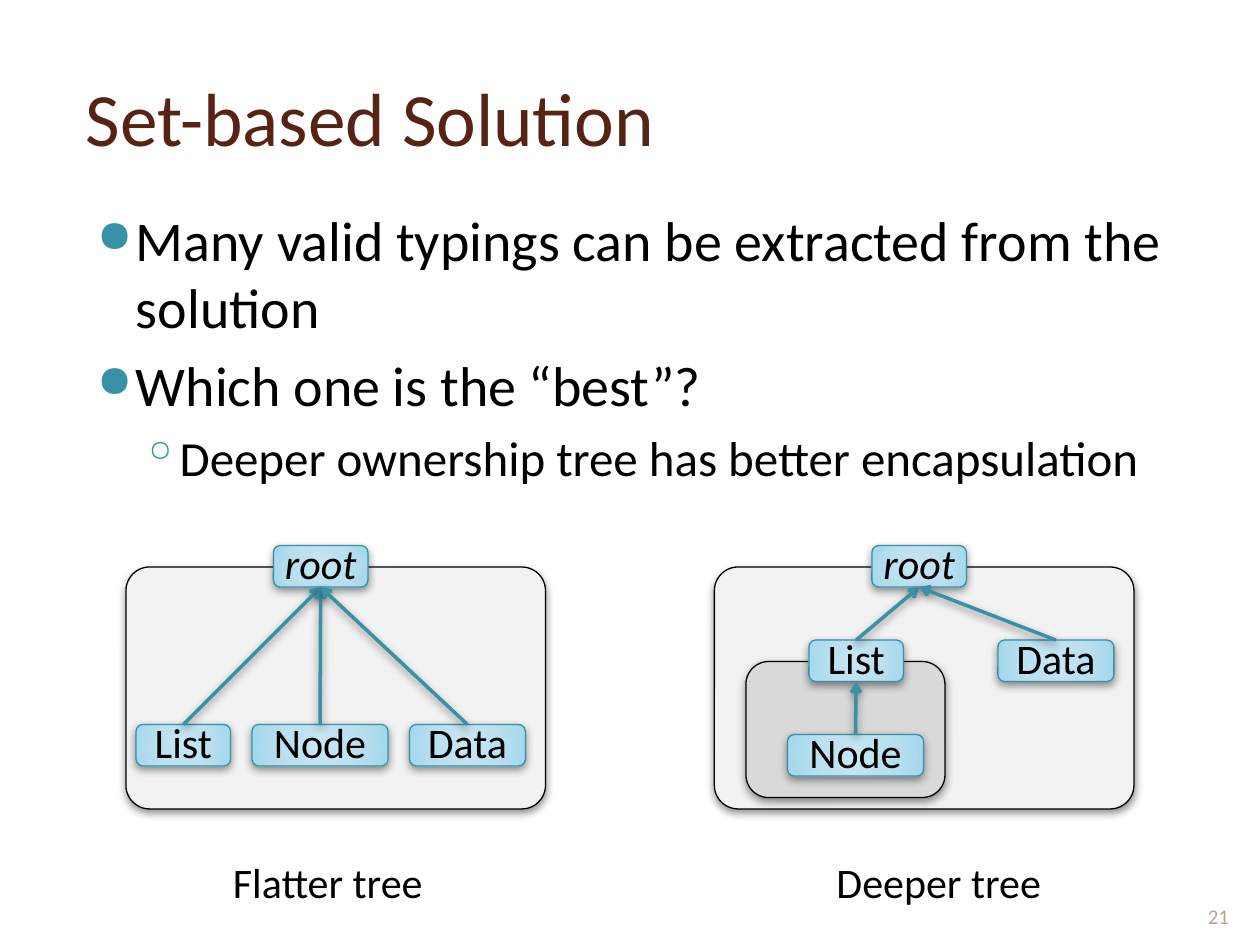
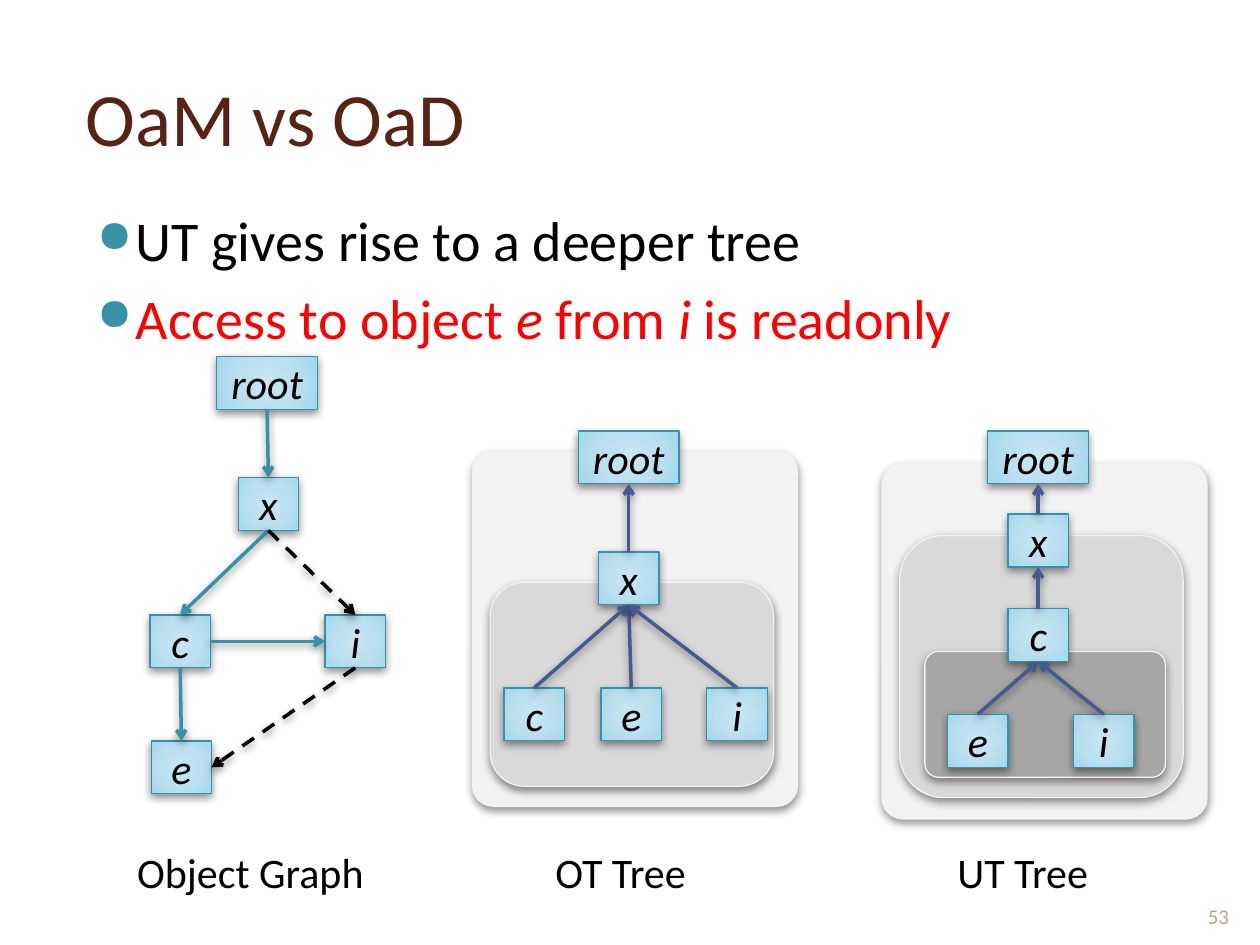
from lxml import etree
from pptx import Presentation
from pptx import util as u
from pptx.dml.color import RGBColor
from pptx.enum import dml, shapes, text
from pptx.oxml import parse_xml
from pptx.oxml.ns import nsdecls, qn

FONT = "Calibri"
BROWN = RGBColor(0x57, 0x23, 0x14)
BLACK = RGBColor(0, 0, 0)
RED = RGBColor(0xFF, 0, 0)
TEAL = RGBColor(0x38, 0x91, 0xA7)
INDIGO = RGBColor(0x47, 0x5A, 0x8D)
SAND = RGBColor(0xB6, 0xA9, 0x8A)
PALE = RGBColor(0xF2, 0xF2, 0xF2)
LIGHT = RGBColor(0xD9, 0xD9, 0xD9)
MID = RGBColor(0xA6, 0xA6, 0xA6)
TOP, LEFT, BOTTOM, RIGHT = range(4)

STOPS = [(0, "C9E6F2"), (50, "BBE0EF"), (97, "A4D8ED"), (100, "9BD7EE")]
GLOW = (
    f'<a:gradFill {nsdecls("a")} rotWithShape="1"><a:gsLst>'
    + "".join(f'<a:gs pos="{pos * 1000}"><a:srgbClr val="{rgb}"/></a:gs>' for pos, rgb in STOPS)
    + '</a:gsLst><a:path path="circle"><a:fillToRect l="50000" t="50000" r="50000" b="50000"/>'
    "</a:path></a:gradFill>"
)
SHADOW = (
    f'<a:effectLst {nsdecls("a")}><a:outerShdw blurRad="63500" dist="25400" dir="5400000" '
    'rotWithShape="0"><a:srgbClr val="000000"><a:alpha val="43000"/></a:srgbClr>'
    "</a:outerShdw></a:effectLst>"
)


def add_run(paragraph, words, size, color=BLACK, italic=False):
    run = paragraph.add_run()
    run.text = words
    run.font.name, run.font.size = FONT, u.Pt(size)
    run.font.color.rgb, run.font.italic = color, italic


def add_frame(slide, left, top, width, height):
    frame = slide.shapes.add_textbox(*map(u.Inches, (left, top, width, height))).text_frame
    frame.word_wrap = True
    return frame


# Content: bullets are (level, colour, [(words, italic)]);
# panels are (left, top, width, height, corner, fill);
# nodes are key: (label, left, top, width);
# links are (start, side, end, side, colour, dashed)
SLIDES = [
    {
        "title": "Set-based Solution",
        "page": "21",
        "bullets": [
            (0, BLACK, [("Many valid typings can be extracted from the solution", False)]),
            (0, BLACK, [("Which one is the “best”?", False)]),
            (1, BLACK, [("Deeper ownership tree has better encapsulation", False)]),
        ],
        "captions": [("Flatter tree", 1.75, 6.75, 1.75), ("Deeper tree", 6.54, 6.75, 1.89)],
        "rounded": True,
        "panel line": BLACK,
        "panels": [
            (1, 4.5, 3.33, 1.92, 0.098, PALE),
            (5.67, 4.5, 3.33, 1.92, 0.098, PALE),
            (5.92, 5.25, 1.58, 1.08, 0.167, LIGHT),
        ],
        "nodes": {
            "flat root": ("root", 2.17, 4.33, 0.75),
            "flat list": ("List", 1.08, 5.75, 0.75),
            "flat node": ("Node", 2, 5.75, 1.08),
            "flat data": ("Data", 3.25, 5.75, 0.92),
            "deep root": ("root", 6.92, 4.33, 0.75),
            "deep list": ("List", 6.42, 5.08, 0.75),
            "deep node": ("Node", 6.25, 5.83, 1.08),
            "deep data": ("Data", 7.92, 5.08, 0.92),
        },
        "links": [
            (child, TOP, parent, BOTTOM, TEAL, False)
            for child, parent in [
                ("flat list", "flat root"), ("flat node", "flat root"), ("flat data", "flat root"),
                ("deep list", "deep root"), ("deep node", "deep list"), ("deep data", "deep root"),
            ]
        ],
    },
    {
        "title": "OaM vs OaD",
        "page": "53",
        "bullets": [
            (0, BLACK, [("UT gives rise to a deeper tree", False)]),
            (0, RED, [("Access to object ", False), ("e", True), (" from ", False),
                      ("i ", True), ("is readonly", False)]),
        ],
        "captions": [
            ("Object Graph", 0.99, 6.67, 2.1),
            ("OT Tree", 4.31, 6.67, 1.44),
            ("UT Tree", 7.5, 6.67, 1.5),
        ],
        "rounded": False,
        "panel line": PALE,
        "panels": [
            (3.75, 3.58, 2.58, 2.82, 0.065, PALE),
            (3.89, 4.62, 2.25, 1.62, 0.167, LIGHT),
            (7, 3.68, 2.58, 2.82, 0.065, PALE),
            (7.14, 4.25, 2.25, 2.08, 0.167, LIGHT),
            (7.34, 5.17, 1.91, 1, 0.11, MID),
        ],
        "nodes": {
            "graph root": ("root", 1.72, 2.83, 0.8),
            "graph x": ("x", 1.89, 3.79, 0.48),
            "graph i": ("i", 2.58, 4.88, 0.48),
            "graph c": ("c", 1.19, 4.88, 0.48),
            "graph e": ("e", 1.2, 5.88, 0.48),
            "OT root": ("root", 4.59, 3.42, 0.8),
            "OT x": ("x", 4.75, 4.38, 0.48),
            "OT c": ("c", 4, 5.46, 0.48),
            "OT e": ("e", 4.77, 5.46, 0.48),
            "OT i": ("i", 5.61, 5.46, 0.48),
            "UT root": ("root", 7.84, 3.42, 0.8),
            "UT x": ("x", 8, 4.08, 0.48),
            "UT c": ("c", 8, 4.83, 0.48),
            "UT e": ("e", 7.52, 5.67, 0.48),
            "UT i": ("i", 8.52, 5.67, 0.48),
        },
        "links": [
            ("graph root", BOTTOM, "graph x", TOP, TEAL, False),
            ("graph x", BOTTOM, "graph c", TOP, TEAL, False),
            ("graph x", BOTTOM, "graph i", TOP, BLACK, True),
            ("graph c", RIGHT, "graph i", LEFT, TEAL, False),
            ("graph c", BOTTOM, "graph e", TOP, TEAL, False),
            ("graph i", BOTTOM, "graph e", RIGHT, BLACK, True),
        ] + [
            (child, TOP, parent, BOTTOM, INDIGO, False)
            for child, parent in [
                ("OT x", "OT root"), ("OT c", "OT x"), ("OT e", "OT x"), ("OT i", "OT x"),
                ("UT x", "UT root"), ("UT c", "UT x"), ("UT e", "UT c"), ("UT i", "UT c"),
            ]
        ],
    },
]

# Bullet levels: left indent, hanging indent, space before, size, symbol, symbol size
LEVELS = [(0.4, -0.31, 6, 32, "●", 80), (0.7, -0.26, 5.5, 28, "◦", 100)]

deck = Presentation()
deck.slide_width, deck.slide_height = u.Inches(10), u.Inches(7.5)

for content in SLIDES:
    slide = deck.slides.add_slide(deck.slide_layouts[5])

    # Title
    title = slide.shapes.title
    title.left, title.top, title.width, title.height = map(u.Inches, (0.58, 0.3, 8.87, 1.25))
    title.text_frame.vertical_anchor = text.MSO_ANCHOR.MIDDLE
    title.text_frame.auto_size = text.MSO_AUTO_SIZE.NONE
    heading = title.text_frame.paragraphs[0]
    heading.alignment = text.PP_ALIGN.LEFT
    add_run(heading, content["title"], 43, BROWN)

    # Bullets
    body = add_frame(slide, 0.58, 1.58, 8.87, 5.25)
    for index, (level, color, runs) in enumerate(content["bullets"]):
        indent, hanging, before, size, symbol, percent = LEVELS[level]
        bullet = body.add_paragraph() if index else body.paragraphs[0]
        bullet.level, bullet.space_before = level, u.Pt(before)
        for words, italic in runs:
            add_run(bullet, words, size, color, italic)
        props = bullet._p.get_or_add_pPr()
        props.set("marL", str(u.Inches(indent)))
        props.set("indent", str(u.Inches(hanging)))
        tint = etree.SubElement(props, qn("a:buClr"))
        etree.SubElement(tint, qn("a:srgbClr"), val=str(TEAL))
        etree.SubElement(props, qn("a:buSzPct"), val=str(percent * 1000))
        etree.SubElement(props, qn("a:buChar"), char=symbol)

    # Ownership panels
    for left, top, width, height, corner, fill in content["panels"]:
        panel = slide.shapes.add_shape(
            shapes.MSO_SHAPE.ROUNDED_RECTANGLE, *map(u.Inches, (left, top, width, height)))
        panel.adjustments[0] = corner
        panel.fill.solid()
        panel.fill.fore_color.rgb = fill
        panel.line.color.rgb, panel.line.width = content["panel line"], u.Pt(0.75)
        panel._element.spPr.append(parse_xml(SHADOW))

    # Object nodes
    rounded = content["rounded"]
    outline = shapes.MSO_SHAPE.ROUNDED_RECTANGLE if rounded else shapes.MSO_SHAPE.RECTANGLE
    node_height = 0.33 if rounded else 0.42
    nodes = {}
    for key, (label, left, top, width) in content["nodes"].items():
        node = slide.shapes.add_shape(outline, *map(u.Inches, (left, top, width, node_height)))
        node.line.color.rgb, node.line.width = TEAL, u.Pt(0.75)
        node._element.spPr.insert(2, parse_xml(GLOW))
        node._element.spPr.append(parse_xml(SHADOW))
        frame = node.text_frame
        name = frame.paragraphs[0]
        name.alignment = text.PP_ALIGN.CENTER
        frame.vertical_anchor = text.MSO_ANCHOR.MIDDLE
        if rounded:
            frame.vertical_anchor = text.MSO_ANCHOR.BOTTOM
            frame.margin_left = frame.margin_right = frame.margin_top = frame.margin_bottom = 0
            name.line_spacing = 0.5
        add_run(name, label, 24, italic=label.islower())
        nodes[key] = node

    # Arrows between nodes
    for start, start_side, end, end_side, color, dashed in content["links"]:
        link = slide.shapes.add_connector(shapes.MSO_CONNECTOR.STRAIGHT, 0, 0, 0, 0)
        link.begin_connect(nodes[start], start_side)
        link.end_connect(nodes[end], end_side)
        link.line.color.rgb, link.line.width = color, u.Pt(2)
        if dashed:
            link.line.dash_style = dml.MSO_LINE.DASH
        etree.SubElement(link.line._get_or_add_ln(), qn("a:tailEnd"), type="arrow")
        link._element.spPr.append(parse_xml(SHADOW))

    # Captions
    for words, left, top, width in content["captions"]:
        add_run(add_frame(slide, left, top, width, 0.5).paragraphs[0], words, 24)

    # Page number
    footer = add_frame(slide, 9.42, 6.9, 0.5, 0.52)
    footer.vertical_anchor = text.MSO_ANCHOR.BOTTOM
    footer.paragraphs[0].alignment = text.PP_ALIGN.CENTER
    add_run(footer.paragraphs[0], content["page"], 12, SAND)

deck.save("out.pptx")
